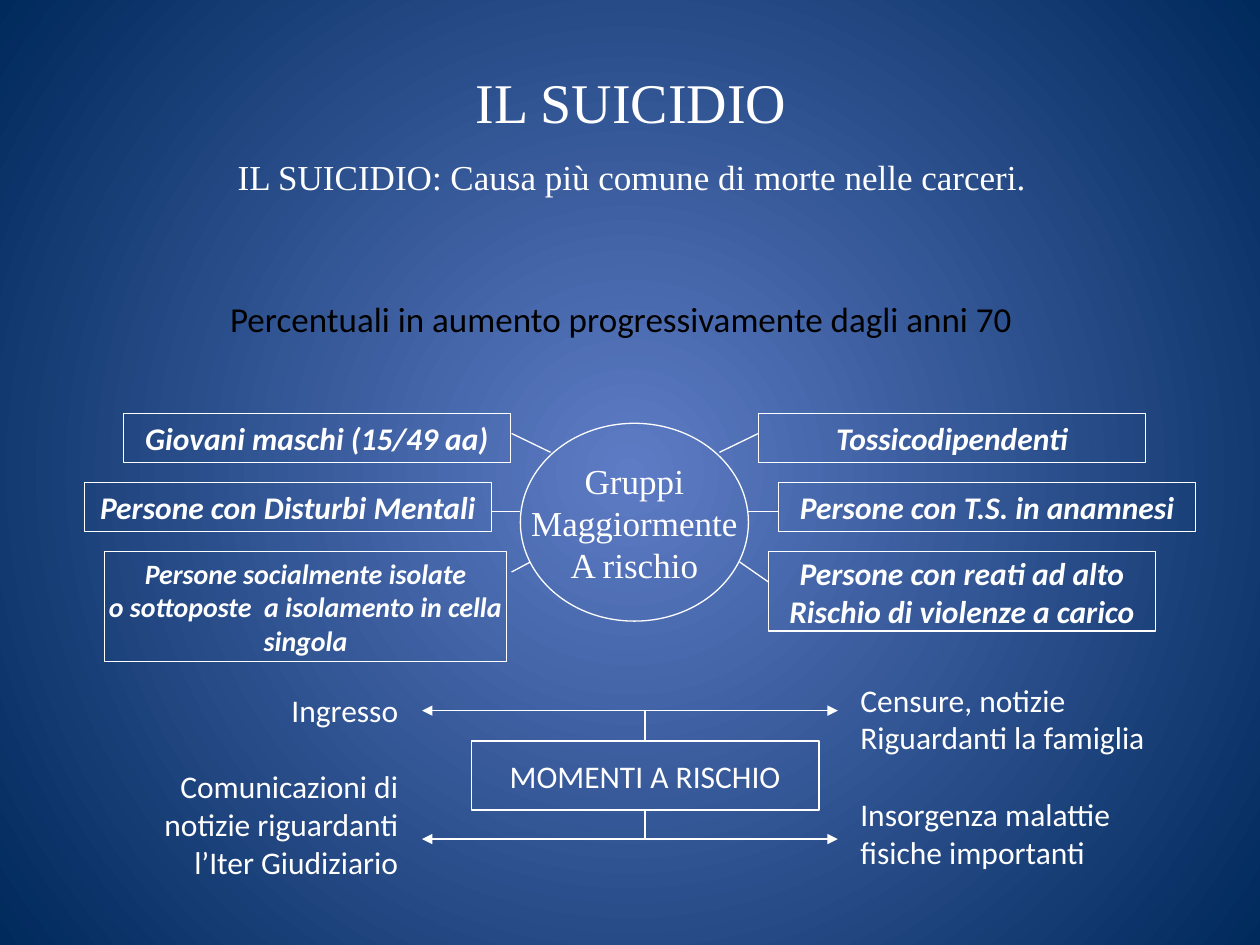
import pptx
import pptx.util
import pptx.dml.color
import pptx.enum.dml
import pptx.enum.shapes
import pptx.enum.text
import pptx.oxml
import pptx.oxml.ns
import lxml.etree

HUES = {"white": "FFFFFF", "black": "000000", "core": "5E7CC5", "edge": "00295C"}
SERIF, SANS = "Times New Roman", "Calibri"
UNIT = pptx.util.Inches(0.1)
COLS, ROWS = 100, 75
ALIGN = pptx.enum.text.PP_ALIGN
FORM = pptx.enum.shapes.MSO_SHAPE
LINK = pptx.enum.shapes.MSO_CONNECTOR
qn = pptx.oxml.ns.qn


def grid(*cells):
    """Turn grid columns and rows into slide lengths."""
    return [round(cell * UNIT) for cell in cells]


def hue(name):
    """Give the named colour."""
    return pptx.dml.color.RGBColor.from_string(HUES[name])


def paint(slide):
    """Fill the background with a round gradient."""
    fill = slide.background.fill
    fill.gradient()
    for stop, name in zip(fill.gradient_stops, ("core", "edge")):
        stop.color.rgb = hue(name)
    lin = next(slide.element.iter(qn("a:lin")))
    glow = lxml.etree.Element(qn("a:path"), path="circle")
    lxml.etree.SubElement(glow, qn("a:fillToRect"), l="50000", t="50000", r="50000", b="50000")
    lin.getparent().replace(lin, glow)


def write(shape, text, size, font=SANS, color="white", align=ALIGN.CENTER,
          bold=False, wrap=False, gaps=()):
    """Write the lines of text, with a gap above the lines listed."""
    frame = shape.text_frame
    frame.text = text
    frame.word_wrap = wrap
    frame.vertical_anchor = pptx.enum.text.MSO_ANCHOR.MIDDLE
    for row, para in enumerate(frame.paragraphs):
        para.alignment = align
        if row in gaps:
            para.space_before = pptx.util.Pt(22)
        for run in para.runs:
            run.font.size = pptx.util.Pt(size)
            run.font.name = font
            run.font.bold = run.font.italic = bold
            run.font.color.rgb = hue(color)


def label(slide, area, text, size, **look):
    """Add a plain text box."""
    write(slide.shapes.add_textbox(*grid(*area)), text, size, **look)


def trace(line):
    """Give a line the thin white stroke."""
    line.color.rgb = hue("white")
    line.width = pptx.util.Pt(0.75)


def frame(slide, area, text, size, form=FORM.RECTANGLE, **look):
    """Add an outlined shape with text."""
    shape = slide.shapes.add_shape(form, *grid(*area))
    shape.shadow.inherit = False
    shape.fill.background()
    trace(shape.line)
    write(shape, text, size, **look)


def link(slide, ends, bent=False):
    """Add a straight line, or an elbow with an arrow at its start."""
    kind = LINK.ELBOW if bent else LINK.STRAIGHT
    wire = slide.shapes.add_connector(kind, *grid(*ends))
    trace(wire.line)
    props = wire.element.spPr
    if bent:
        props.find(qn("a:prstGeom")).set("prst", "bentConnector2")
        lxml.etree.SubElement(props.find(qn("a:ln")), qn("a:headEnd"), type="triangle")
    lxml.etree.SubElement(props, qn("a:effectLst"))


def heads(slide):
    """Add the title and the two statements."""
    label(slide, (5.1, 2.9, 90, 10.3), "IL SUICIDIO", 32, font=SERIF, wrap=True)
    label(slide, (3.7, 11.5, 92.9, 5), "IL SUICIDIO: Causa più comune di morte nelle carceri.",
          20, font=SERIF, wrap=True)
    label(slide, (4.3, 23.3, 90, 3.9), "Percentuali in aumento progressivamente dagli anni 70",
          20, color="black", wrap=True)


def groups(slide):
    """Add the groups at risk around their ellipse."""
    frame(slide, (41.3, 33.6, 18.1, 15.7), "Gruppi\nMaggiormente\nA rischio", 20,
          form=FORM.OVAL, font=SERIF)
    top, step, tall = 32.8, 5.5, 3.9
    boxes = (
        (9.8, 0, 30.7, tall, "Giovani maschi (15/49 aa)", 18),
        (6.7, 1, 32.3, tall, "Persone con Disturbi Mentali", 18),
        (8.3, 2, 31.9, 8.7,
         "Persone socialmente isolate\no sottoposte  a isolamento in cella\nsingola", 16),
        (60.2, 0, 30.7, tall, "Tossicodipendenti", 18),
        (61.8, 1, 33.1, tall, "Persone con T.S. in anamnesi", 18),
        (61, 2, 30.7, 6.3, "Persone con reati ad alto\nRischio di violenze a carico", 18),
    )
    for left, row, wide, high, text, size in boxes:
        frame(slide, (left, top + row * step, wide, high), text, size, bold=True)
    for ends in ((57.1, 35.9, 60.2, 34.4), (59.4, 40.6, 61.8, 40.6), (58.7, 44.6, 61, 46.2),
                 (43.7, 35.9, 40.6, 34.4), (39, 40.6, 41.3, 40.6), (42.1, 44.6, 40.6, 45.4)):
        link(slide, ends)


def moments(slide):
    """Add the moments at risk with their arrows."""
    frame(slide, (37.4, 58.8, 27.6, 5.5), "MOMENTI A RISCHIO", 18)
    label(slide, (67.3, 51.7, 25.2, 19.7),
          "Censure, notizie\nRiguardanti la famiglia\nInsorgenza malattie\nfisiche importanti",
          18, align=ALIGN.LEFT, gaps=(2,))
    label(slide, (10.6, 52.5, 22, 19.7),
          "Ingresso\nComunicazioni di\nnotizie riguardanti\nl’Iter Giudiziario",
          18, align=ALIGN.RIGHT, gaps=(1,))
    for level, side in ((56.4, 58.8), (66.6, 64.3)):
        for tip in (33.5, 66.5):
            link(slide, (tip, level, 51.2, side), bent=True)


def main():
    """Build the slide and save it."""
    deck = pptx.Presentation()
    deck.slide_width, deck.slide_height = grid(COLS, ROWS)
    slide = deck.slides.add_slide(deck.slide_layouts[6])
    paint(slide)
    heads(slide)
    groups(slide)
    moments(slide)
    deck.save("out.pptx")


if __name__ == "__main__":
    main()
